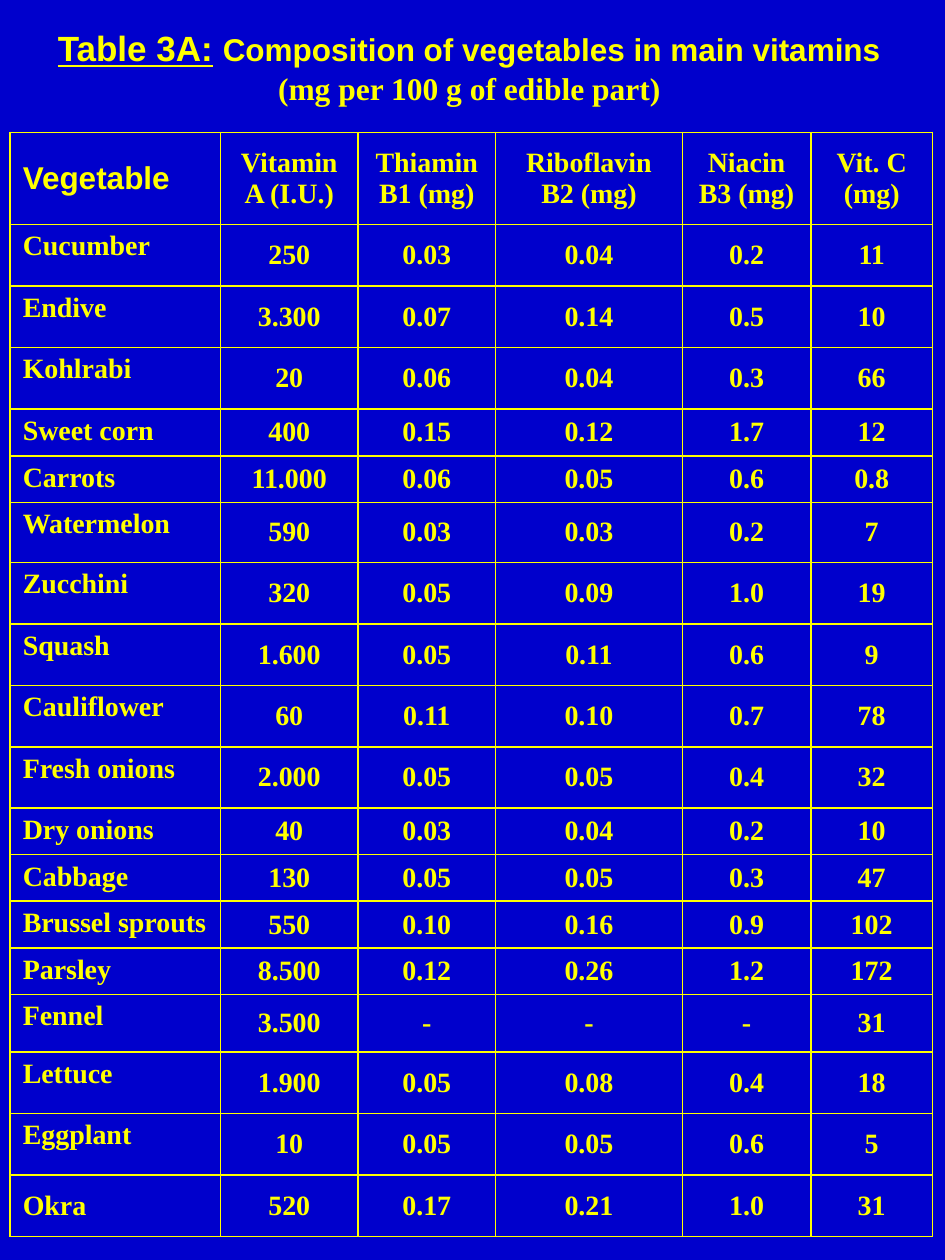
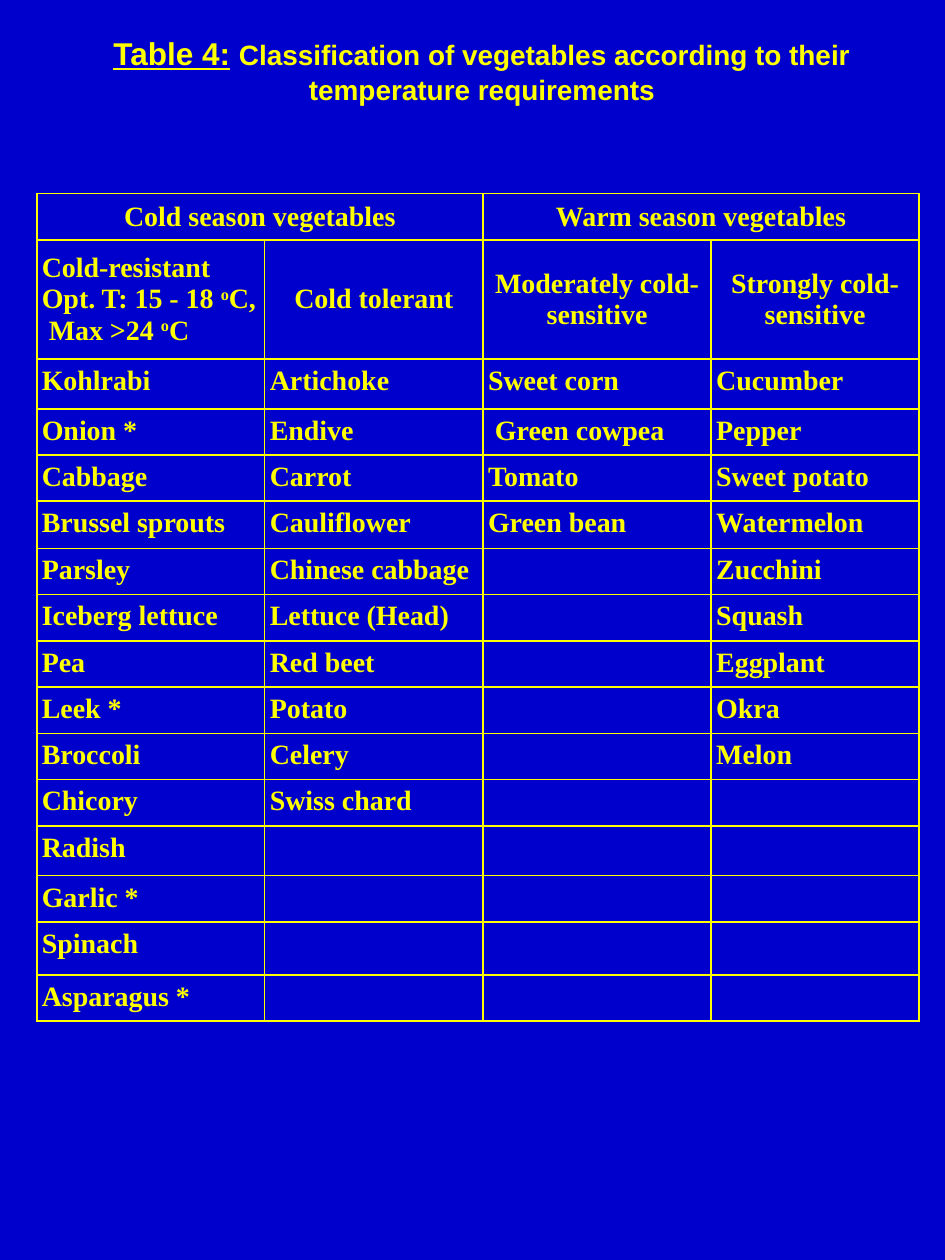
from lxml import etree
from pptx import Presentation
from pptx.dml.color import RGBColor
from pptx.enum.text import MSO_ANCHOR, PP_ALIGN
from pptx.oxml.ns import qn
from pptx.util import Pt

LEFT, CENTER = PP_ALIGN.LEFT, PP_ALIGN.CENTER
TOP, MIDDLE = MSO_ANCHOR.TOP, MSO_ANCHOR.MIDDLE

COLORS = {"background": "0000CC", "ink": "FFFF00"}
SANS, SERIF = "Arial", "Times New Roman"
CELL_FONT = {"name": SERIF, "size": Pt(16), "bold": True}
CORNER_FONT = {"name": SANS, "size": Pt(18), "bold": True}

VITAMIN_HEADER = ["Vegetable", "Vitamin Α (I.U.)", "Thiamin\nB1 (mg)",
                  "Riboflavin\nB2 (mg)", "Niacin B3 (mg)", "Vit. C\n(mg)"]
VITAMIN_HEADER_HEIGHT = 52.8
VITAMIN_WIDTHS = [120.2, 78.6, 78.6, 106.8, 73.4, 69.6]
# vegetable, row height, vitamin values
VITAMINS = [
    ("Cucumber", 35.1, "250 0.03 0.04 0.2 11"),
    ("Endive", 35.1, "3.300 0.07 0.14 0.5 10"),
    ("Kohlrabi", 35.1, "20 0.06 0.04 0.3 66"),
    ("Sweet corn", 27, "400 0.15 0.12 1.7 12"),
    ("Carrots", 25, "11.000 0.06 0.05 0.6 0.8"),
    ("Watermelon", 34.4, "590 0.03 0.03 0.2 7"),
    ("Zucchini", 35.1, "320 0.05 0.09 1.0 19"),
    ("Squash", 35.1, "1.600 0.05 0.11 0.6 9"),
    ("Cauliflower", 35.1, "60 0.11 0.10 0.7 78"),
    ("Fresh onions", 35.1, "2.000 0.05 0.05 0.4 32"),
    ("Dry onions", 26.6, "40 0.03 0.04 0.2 10"),
    ("Cabbage", 25, "130 0.05 0.05 0.3 47"),
    ("Brussel sprouts", 27, "550 0.10 0.16 0.9 102"),
    ("Parsley", 25, "8.500 0.12 0.26 1.2 172"),
    ("Fennel", 33, "3.500 - - - 31"),
    ("Lettuce", 35.1, "1.900 0.05 0.08 0.4 18"),
    ("Eggplant", 35.1, "10 0.05 0.05 0.6 5"),
    ("Okra", 35.1, "520 0.17 0.21 1.0 31"),
]

SEASONS = ["Cold season vegetables", "", "Warm season vegetables", ""]
TOLERANCES = ["Cold-resistant\nOpt. T: 15 - 18 |o|C,\n Max >24 |o|C", "Cold tolerant",
              "Moderately cold-sensitive", "Strongly cold-sensitive"]
SEASON_WIDTHS = [130.3, 124.7, 130.4, 118.8]
SEASON_HEIGHTS = [25, 68, 28.5, 25, 25, 27, 25, 25, 25, 25, 25, 25, 28.5, 25, 30.3, 25]
SEASON_MARGINS = {"margin_left": Pt(2.9), "margin_right": Pt(2.9)}
VEGETABLES = [
    ["Kohlrabi", "Onion *", "Cabbage", "Brussel sprouts", "Parsley", "Iceberg lettuce", "Pea",
     "Leek *", "Broccoli", "Chicory", "Radish", "Garlic *", "Spinach", "Asparagus *"],
    ["Artichoke", "Endive", "Carrot", "Cauliflower", "Chinese cabbage", "Lettuce (Head)",
     "Red beet", "Potato", "Celery", "Swiss chard"],
    ["Sweet corn", " Green cowpea", "Tomato", "Green bean"],
    ["Cucumber", "Pepper", "Sweet potato", "Watermelon", "Zucchini", "Squash", "Eggplant",
     "Okra", "Melon"],
]


def set_attrs(obj, values):
    for name, value in values.items():
        setattr(obj, name, value)


def add_run(p, text, font):
    r = p.add_run()
    r.text = text
    set_attrs(r.font, font)
    r.font.color.rgb = RGBColor.from_string(COLORS["ink"])
    return r


def add_slide(prs):
    s = prs.slides.add_slide(prs.slide_layouts[6])
    s.background.fill.solid()
    s.background.fill.fore_color.rgb = RGBColor.from_string(COLORS["background"])
    return s


def add_title(s, box, number, size, parts):
    """Underlined table number followed by (text, font name) parts, two points smaller."""
    tf = s.shapes.add_textbox(*map(Pt, box)).text_frame
    set_attrs(tf, {"word_wrap": True, "vertical_anchor": MIDDLE})
    p = tf.paragraphs[0]
    p.alignment = CENTER
    add_run(p, number, {"name": SANS, "size": Pt(size), "bold": True, "underline": True})
    add_run(p, " ", {"name": SANS, "size": Pt(size), "bold": True})
    for text, name in parts:
        add_run(p, text, {"name": name, "size": Pt(size - 2), "bold": True})


def set_borders(cell):
    tc_pr = cell._tc.get_or_add_tcPr()
    for i, side in enumerate(("lnL", "lnR", "lnT", "lnB")):
        ln = etree.Element(qn(f"a:{side}"), w=str(Pt(1)))
        fill = etree.SubElement(ln, qn("a:solidFill"))
        etree.SubElement(fill, qn("a:srgbClr"), val=COLORS["ink"])
        tc_pr.insert(i, ln)


def fill_cell(cell, text, align, anchor, font):
    """Write text into a cell; newlines part paragraphs, and |x| is superscript."""
    cell.fill.background()
    set_borders(cell)
    cell.vertical_anchor = anchor
    tf = cell.text_frame
    for i, line in enumerate(text.split("\n")):
        p = tf.add_paragraph() if i else tf.paragraphs[0]
        p.alignment = align
        if not line:
            etree.SubElement(p._p, qn("a:endParaRPr"), sz=str(int(font["size"].pt * 100)))
            continue
        for j, part in enumerate(line.split("|")):
            r = add_run(p, part, font)
            if j % 2:
                r._r.get_or_add_rPr().set("baseline", "30000")


def add_grid(s, left, top, widths, heights, rows, style, margins):
    """Add a table; style(row, column) gives alignment, anchor and font."""
    frame = s.shapes.add_table(len(heights), len(widths), Pt(left), Pt(top),
                               Pt(sum(widths)), Pt(sum(heights)))
    table = frame.table
    set_attrs(table, {"first_row": False, "horz_banding": False})
    for column, width in zip(table.columns, widths):
        column.width = Pt(width)
    for i, (height, texts) in enumerate(zip(heights, rows)):
        table.rows[i].height = Pt(height)
        for j, text in enumerate(texts):
            set_attrs(table.cell(i, j), margins)
            fill_cell(table.cell(i, j), text, *style(i, j))
    return table


def vitamin_style(row, col):
    if col:
        return CENTER, MIDDLE, CELL_FONT
    if row == 0:
        return LEFT, MIDDLE, CORNER_FONT
    return LEFT, MIDDLE if row == len(VITAMINS) else TOP, CELL_FONT


def season_style(row, col):
    if row > 1:
        return LEFT, TOP, CELL_FONT
    return LEFT if (row, col) == (1, 0) else CENTER, MIDDLE, CELL_FONT


def add_vitamin_slide(prs):
    s = add_slide(prs)
    add_title(s, (25.2, 5.8, 486, 64.8), "Table 3A:", 20,
              [("Composition of vegetables in main vitamins", SANS),
               (" (mg per 100 g of edible part)", SERIF)])
    rows = [VITAMIN_HEADER] + [[name, *values.split()] for name, _, values in VITAMINS]
    heights = [VITAMIN_HEADER_HEIGHT] + [height for _, height, _ in VITAMINS]
    add_grid(s, 5.8, 75.6, VITAMIN_WIDTHS, heights, rows, vitamin_style, {})


def add_season_slide(prs):
    s = add_slide(prs)
    add_title(s, (25.9, 14.4, 499, 51.1), "Table 4:", 18,
              [("Classification of vegetables according to their temperature requirements", SANS)])
    count = max(map(len, VEGETABLES))
    columns = [names + [""] * (count - len(names)) for names in VEGETABLES]
    rows = [SEASONS, TOLERANCES, *zip(*columns)]
    table = add_grid(s, 21, 110.7, SEASON_WIDTHS, SEASON_HEIGHTS, rows, season_style,
                     SEASON_MARGINS)
    for col in (0, 2):
        table.cell(0, col).merge(table.cell(0, col + 1))


def main():
    prs = Presentation()
    set_attrs(prs, {"slide_width": Pt(540), "slide_height": Pt(720)})
    add_vitamin_slide(prs)
    add_season_slide(prs)
    prs.save("out.pptx")


if __name__ == "__main__":
    main()
